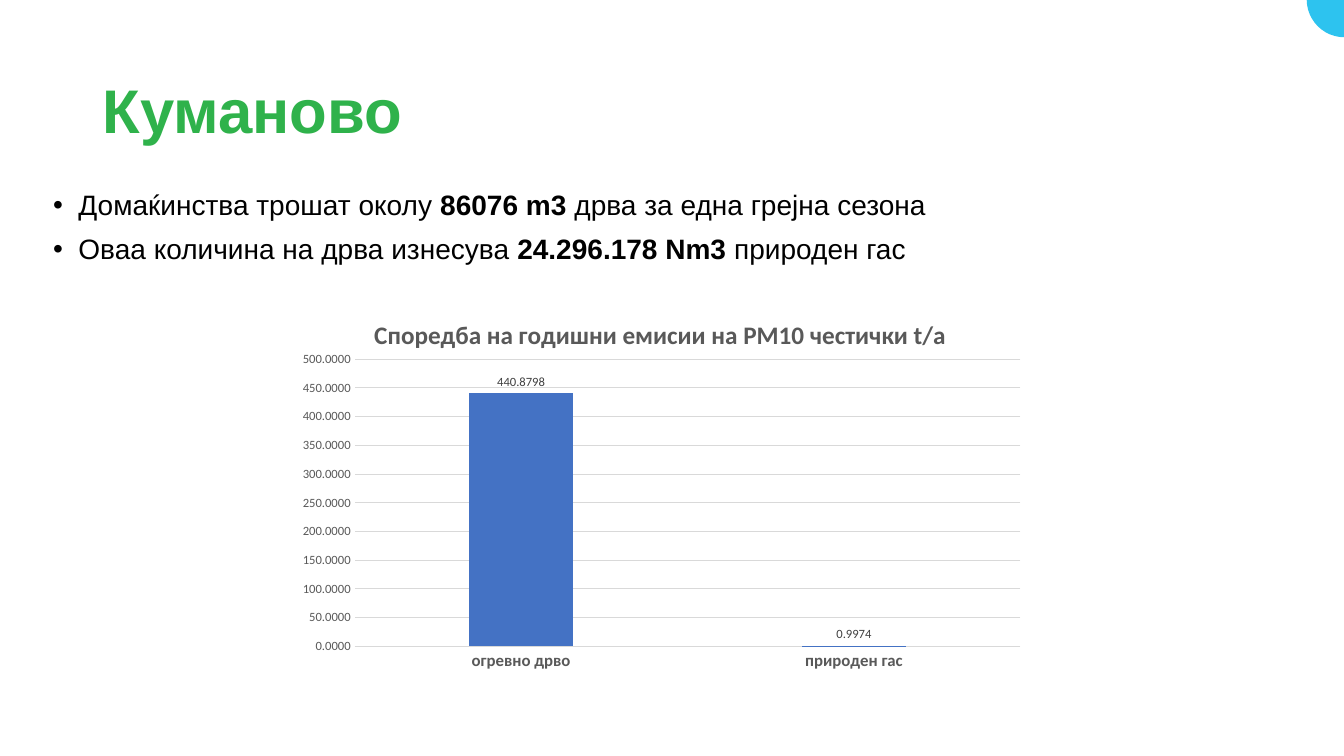
from pptx import Presentation
from pptx.chart.data import CategoryChartData
from pptx.dml.color import RGBColor
from pptx.enum.chart import XL_CHART_TYPE, XL_LABEL_POSITION, XL_TICK_MARK
from pptx.enum.shapes import MSO_SHAPE
from pptx.enum.text import MSO_ANCHOR
from pptx.oxml import parse_xml
from pptx.oxml.ns import nsdecls
from pptx.util import Inches, Pt


def rgb(value):
    return RGBColor.from_string(value)


def style_font(font, size, color, bold=False, name="Calibri"):
    font.size = Pt(size)
    font.bold = bold
    font.name = name
    font.color.rgb = rgb(color)


def style_line(line, color):
    line.color.rgb = rgb(color)
    line.width = Pt(0.75)


def add_circle(s, left, top, size, color):
    sp = s.shapes.add_shape(MSO_SHAPE.OVAL, Inches(left), Inches(top), Inches(size), Inches(size))
    sp.shadow.inherit = False
    sp.fill.solid()
    sp.fill.fore_color.rgb = rgb(color)
    sp.line.fill.background()


def add_bullet(p):
    pPr = p._p.get_or_add_pPr()
    pPr.set("marL", str(Inches(0.25)))
    pPr.set("indent", str(-Inches(0.25)))
    pPr.append(parse_xml(f'<a:buFont {nsdecls("a")} typeface="Arial"/>'))
    pPr.append(parse_xml(f'<a:buChar {nsdecls("a")} char="•"/>'))


def add_text(s, box, paragraphs, size, color, anchor=MSO_ANCHOR.TOP, bullets=False):
    tf = s.shapes.add_textbox(*map(Inches, box)).text_frame
    tf.word_wrap = True
    tf.vertical_anchor = anchor
    for i, runs in enumerate(paragraphs):
        p = tf.add_paragraph() if i else tf.paragraphs[0]
        p.line_spacing = 0.9
        if bullets:
            p.space_before = Pt(10)
            add_bullet(p)
        for text, bold in runs:
            r = p.add_run()
            r.text = text
            style_font(r.font, size, color, bold, "Arial")


def manual_layout(target, **fractions):
    values = "".join(f'<c:{key} val="{value}"/>' for key, value in fractions.items())
    inner = '<c:layoutTarget val="inner"/>' if "w" in fractions else ""
    return parse_xml(
        f'<c:layout {nsdecls("c")}><c:manualLayout>{inner}<c:xMode val="edge"/>'
        f'<c:yMode val="edge"/>{values}</c:manualLayout></c:layout>'
    )


def set_layout(parent, before, **fractions):
    for old in parent.findall("{*}layout"):
        parent.remove(old)
    parent.insert(before, manual_layout(parent, **fractions))


def add_emission_chart(s, box, title, categories, values):
    data = CategoryChartData(number_format="0.0000")
    data.categories = categories
    data.add_series("Series 1", values)
    frame = s.shapes.add_chart(XL_CHART_TYPE.COLUMN_CLUSTERED, *map(Inches, box), data)
    chart = frame.chart
    style_font(chart.font, 10, "000000")
    chart.has_legend = False

    chart.has_title = True
    r = chart.chart_title.text_frame.paragraphs[0].add_run()
    r.text = title
    style_font(r.font, 18, "595959", True)
    chart.chart_title.include_in_layout = False
    set_layout(chart.chart_title._element, 1, x=0.11, y=0.05)

    plot = chart.plots[0]
    plot.gap_width = 219
    plot.overlap = -27
    plot.vary_by_categories = False
    set_layout(plot._element.getparent(), 0, x=0.09, y=0.17, w=0.89, h=0.74)

    fill = plot.series[0].format.fill
    fill.solid()
    fill.fore_color.rgb = rgb("4472C4")
    plot.has_data_labels = True
    labels = plot.data_labels
    labels.show_value = True
    labels.number_format = "0.0000"
    labels.number_format_is_linked = False
    labels.position = XL_LABEL_POSITION.OUTSIDE_END
    style_font(labels.font, 9, "404040")

    cat, val = chart.category_axis, chart.value_axis
    for axis, size, bold in ((cat, 12, True), (val, 9, False)):
        axis.major_tick_mark = XL_TICK_MARK.NONE
        axis.minor_tick_mark = XL_TICK_MARK.NONE
        style_font(axis.tick_labels.font, size, "595959", bold)
    style_line(cat.format.line, "D9D9D9")
    val.format.line.fill.background()
    style_line(val.major_gridlines.format.line, "D9D9D9")
    val.minimum_scale, val.maximum_scale, val.major_unit = 0, 500, 50
    val.tick_labels.number_format = "0.0000"
    val.tick_labels.number_format_is_linked = False


def main():
    prs = Presentation()
    prs.slide_width, prs.slide_height = Inches(13.33), Inches(7.5)
    s = prs.slides.add_slide(prs.slide_layouts[6])
    add_circle(s, 12.96, -0.38, 0.75, "2DC3EF")
    add_text(s, (0.92, 0.4, 11.5, 1.45), [[("Куманово", True)]], 44, "2FB24B", MSO_ANCHOR.MIDDLE)
    facts = [
        [("Домаќинства трошат околу ", False), ("86076 m3 ", True), ("дрва за една грејна сезона", False)],
        [("Оваа количина на дрва изнесува ", False), ("24.296.178 Nm3 ", True), ("природен гас", False)],
    ]
    add_text(s, (0.43, 1.85, 9.7, 1.45), facts, 20, "000000", bullets=True)
    add_emission_chart(
        s,
        (2.85, 2.91, 7.42, 3.85),
        "Споредба на годишни емисии на PM10 честички t/a",
        ["огревно дрво", "природен гас"],
        [440.8798, 0.9974],
    )
    prs.save("out.pptx")


if __name__ == "__main__":
    main()
